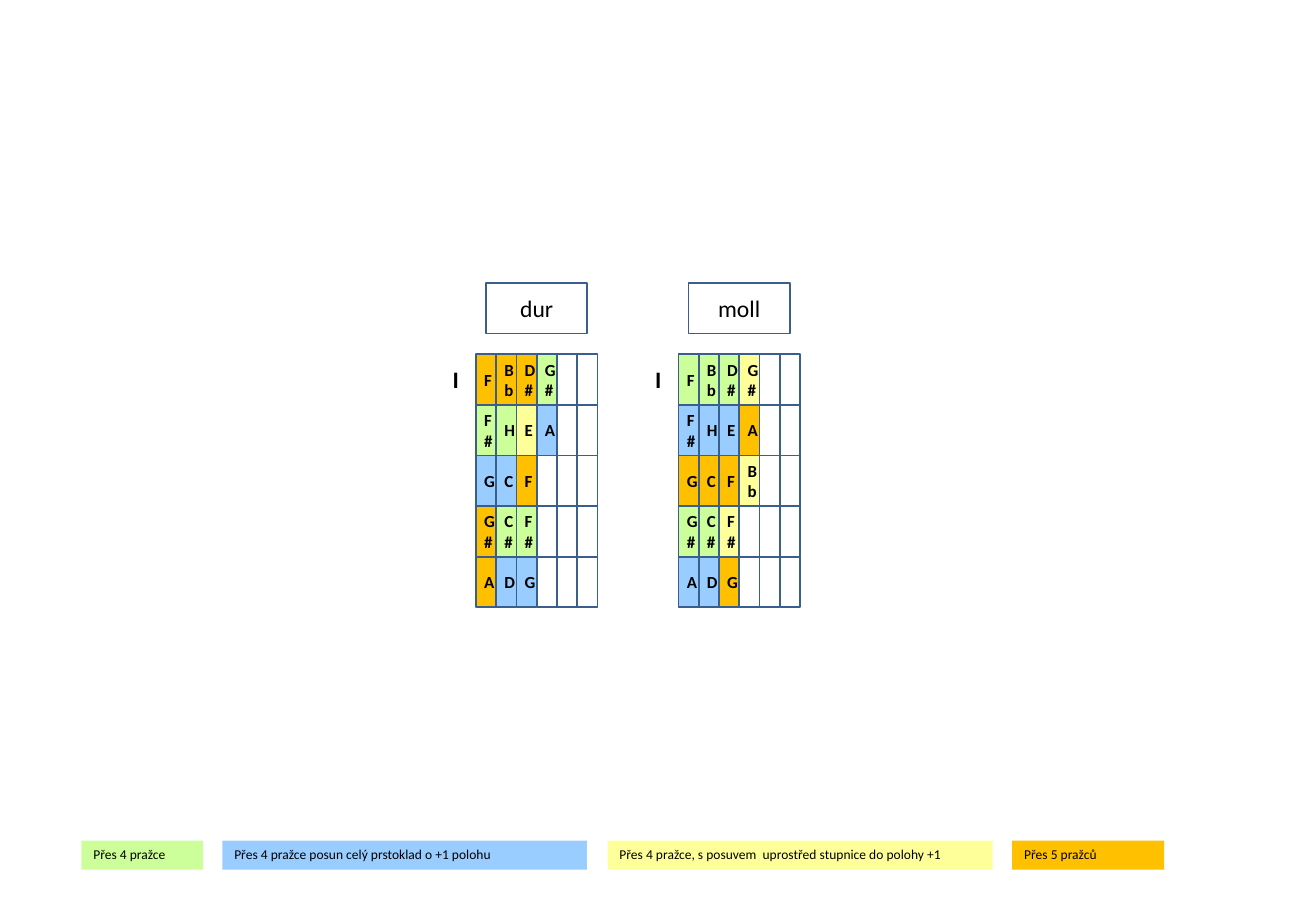
from pptx import Presentation
from pptx.dml.color import RGBColor
from pptx.enum.shapes import MSO_SHAPE
from pptx.enum.text import MSO_ANCHOR, PP_ALIGN
from pptx.util import Inches, Pt

COLORS = {
    "green": "CCFF99",
    "blue": "99CCFF",
    "yellow": "FFFF99",
    "orange": "FFC000",
    "outline": "3A5F8C",
    "text": "000000",
}
FRET_WIDTH = 1 / 6
ROW_HEIGHT = 5 / 12
GRID_TOP = 35 / 12
FRETS = 6

NOTES = [
    ["F", "Bb", "D#", "G#"],
    ["F#", "H", "E", "A"],
    ["G", "C", "F", "Bb"],
    ["G#", "C#", "F#"],
    ["A", "D", "G"],
]

# Scale name, left edge of its grid, fill of each note
SCALES = [
    ("dur", 47 / 12, [
        ["orange", "orange", "orange", "green"],
        ["green", "green", "yellow", "blue"],
        ["blue", "blue", "orange"],
        ["orange", "green", "green"],
        ["orange", "blue", "blue"],
    ]),
    ("moll", 67 / 12, [
        ["green", "green", "green", "yellow"],
        ["blue", "blue", "blue", "orange"],
        ["orange", "orange", "orange", "yellow"],
        ["green", "green", "yellow"],
        ["blue", "blue", "orange"],
    ]),
]

# Legend: left, width, fill, wording
LEGEND = [
    (0.67, 1, "green", "Přes 4 pražce"),
    (1.83, 3, "blue", "Přes 4 pražce posun celý prstoklad o +1 polohu"),
    (5, 3.17, "yellow", "Přes 4 pražce, s posuvem  uprostřed stupnice do polohy +1"),
    (8.33, 1.25, "orange", "Přes 5 pražců"),
]


def write(box, text, size, bold=False, align=PP_ALIGN.CENTER, anchor=MSO_ANCHOR.MIDDLE):
    box.text_frame.word_wrap = True
    box.text_frame.vertical_anchor = anchor
    para = box.text_frame.paragraphs[0]
    para.alignment = align
    span = para.add_run()
    span.text = text
    span.font.name = "Calibri"
    span.font.size = Pt(size)
    span.font.bold = bold
    span.font.color.rgb = RGBColor.from_string(COLORS["text"])


def add_box(left, top, width, height, fill=None, outlined=True):
    box = page.shapes.add_shape(
        MSO_SHAPE.RECTANGLE, Inches(left), Inches(top), Inches(width), Inches(height))
    box.shadow.inherit = False
    if fill:
        box.fill.solid()
        box.fill.fore_color.rgb = RGBColor.from_string(COLORS[fill])
    else:
        box.fill.background()
    if outlined:
        box.line.color.rgb = RGBColor.from_string(COLORS["outline"])
        box.line.width = Pt(1)
    else:
        box.line.fill.background()
    return box


deck = Presentation()
deck.slide_width = Inches(10.83)
deck.slide_height = Inches(7.5)
page = deck.slides.add_slide(deck.slide_layouts[6])

for name, grid_left, fills in SCALES:
    # Scale heading
    heading = add_box(grid_left + FRET_WIDTH / 2, 2.33, 5 * FRET_WIDTH, ROW_HEIGHT)
    write(heading, name, 14)

    # Position numeral beside the first row
    numeral = page.shapes.add_textbox(
        Inches(grid_left - 2 * FRET_WIDTH), Inches(GRID_TOP),
        Inches(2 * FRET_WIDTH), Inches(ROW_HEIGHT))
    write(numeral, "I", 14, bold=True)

    # Fretboard grid
    for row, row_fills in enumerate(fills):
        for fret in range(FRETS):
            has_note = fret < len(row_fills)
            cell = add_box(
                grid_left + fret * FRET_WIDTH, GRID_TOP + row * ROW_HEIGHT,
                FRET_WIDTH, ROW_HEIGHT, row_fills[fret] if has_note else None)
            if has_note:
                write(cell, NOTES[row][fret], 10, bold=True)

# Legend
for left, width, fill, text in LEGEND:
    entry = add_box(left, 6.92, width, 0.24, fill, outlined=False)
    write(entry, text, 8, align=PP_ALIGN.LEFT, anchor=MSO_ANCHOR.TOP)

deck.save("out.pptx")
